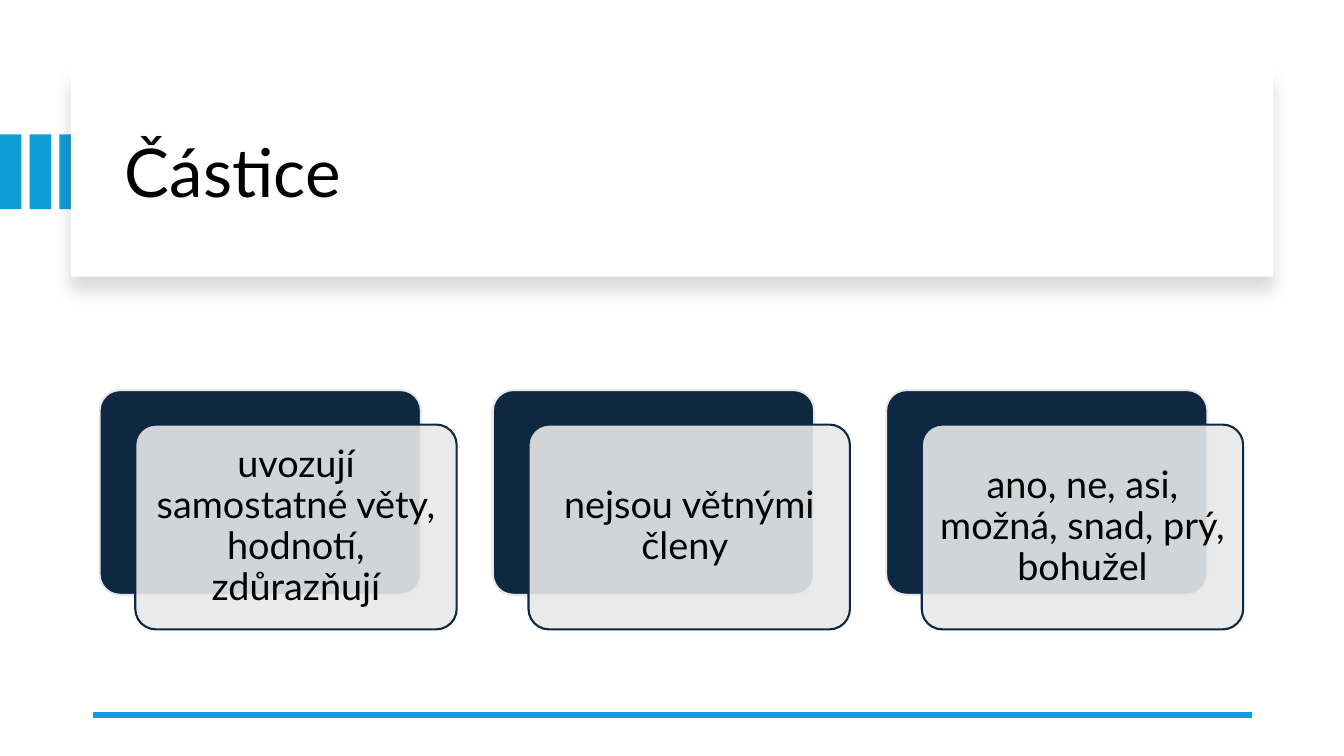
import pptx
import pptx.dml.color
import pptx.enum.shapes
import pptx.enum.text
import pptx.oxml
import pptx.oxml.ns
import pptx.util
from pptx.util import Cm

TITLE = "Částice"
CARDS = [
    "uvozují samostatné věty, hodnotí, zdůrazňují",
    "nejsou větnými členy ",
    "ano, ne, asi, možná, snad, prý, bohužel",
]
FONT = "Lato"
BLUE, NAVY, GREY, WHITE, BLACK = "0F9ED5", "0E2841", "E8E8E8", "FFFFFF", "000000"

STRIPE_COUNT, STRIPE_STEP = 3, 0.75
CARD_LEFT, CARD_TOP, CARD_STEP = 2.51, 9.83, 9.91
CARD_SIZE = (8.1, 5.16)
CARD_SHIFT = (0.9, 0.87)

RECTANGLE = pptx.enum.shapes.MSO_SHAPE.RECTANGLE
ROUNDED = pptx.enum.shapes.MSO_SHAPE.ROUNDED_RECTANGLE
ALIGN = pptx.enum.text.PP_ALIGN


def paint(color_format, value):
    color_format.rgb = pptx.dml.color.RGBColor.from_string(value)


def xml(markup):
    """Parse one DrawingML element."""
    head, rest = markup.split(" ", 1)
    return pptx.oxml.parse_xml(f"{head} {pptx.oxml.ns.nsdecls('a')} {rest}")


def add_block(kind, left, top, width, height, fill, line=None):
    shape = page.shapes.add_shape(kind, Cm(left), Cm(top), Cm(width), Cm(height))
    shape.shadow.inherit = False
    shape.fill.solid()
    paint(shape.fill.fore_color, fill)
    if line:
        paint(shape.line.color, line)
        shape.line.width = pptx.util.Pt(1.5)
    else:
        shape.line.fill.background()
    return shape


def write(shape, text, size, align):
    frame = shape.text_frame
    frame.word_wrap = True
    frame.vertical_anchor = pptx.enum.text.MSO_ANCHOR.MIDDLE
    frame.text = text
    para = frame.paragraphs[0]
    para.alignment = align
    para.line_spacing = 0.9
    span = para.runs[0]
    span.font.name = FONT
    span.font.size = pptx.util.Pt(size)
    paint(span.font.color, BLACK)


def add_card(left, text):
    add_block(ROUNDED, left, CARD_TOP, *CARD_SIZE, NAVY, GREY).adjustments[0] = 0.1
    front = add_block(ROUNDED, left + CARD_SHIFT[0], CARD_TOP + CARD_SHIFT[1],
                      *CARD_SIZE, GREY, NAVY)
    front.adjustments[0] = 0.1
    fill_color = front.fill._xPr.find(".//" + pptx.oxml.ns.qn("a:srgbClr"))
    fill_color.append(xml('<a:alpha val="90000"/>'))
    frame = front.text_frame
    frame.margin_left = frame.margin_right = Cm(0.28)
    frame.margin_top = frame.margin_bottom = Cm(0.28)
    write(front, text, 27, ALIGN.CENTER)


deck = pptx.Presentation()
deck.slide_width, deck.slide_height = Cm(33.87), Cm(19.05)
page = deck.slides.add_slide(deck.slide_layouts[6])

for index in range(STRIPE_COUNT):
    add_block(RECTANGLE, index * STRIPE_STEP, 3.39, 0.54, 1.88, BLUE)

banner = add_block(RECTANGLE, 1.79, 1.7, 30.3, 5.27, WHITE)
banner_effects = banner._element.spPr.find(pptx.oxml.ns.qn("a:effectLst"))
banner_effects.append(xml(
    '<a:outerShdw blurRad="139700" dist="127000" dir="5400000" algn="t" rotWithShape="0">'
    '<a:srgbClr val="000000"><a:alpha val="15000"/></a:srgbClr></a:outerShdw>'))

title = page.shapes.add_textbox(Cm(2.9), Cm(2.26), Cm(28.27), Cm(4.32))
write(title, TITLE, 48, ALIGN.LEFT)

rule = page.shapes.add_connector(
    pptx.enum.shapes.MSO_CONNECTOR.STRAIGHT, Cm(2.34), Cm(18.01), Cm(31.55), Cm(18.01))
paint(rule.line.color, BLUE)
rule.line.width = pptx.util.Pt(4.5)
rule._element.spPr.append(xml("<a:effectLst />"))

for index, text in enumerate(CARDS):
    add_card(CARD_LEFT + index * CARD_STEP, text)

deck.save("out.pptx")
